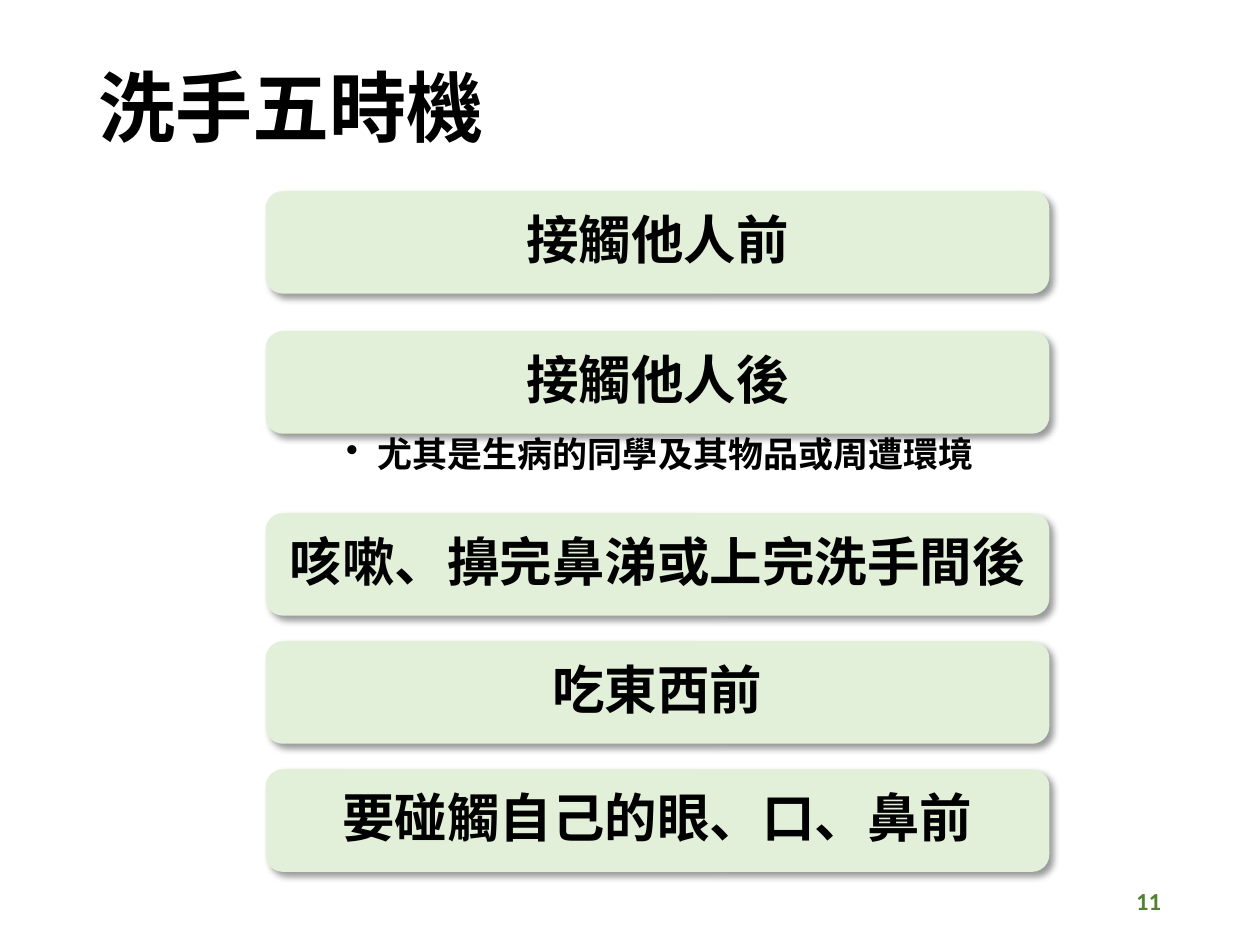
import pptx
import pptx.util
import pptx.dml.color
import pptx.enum.shapes
import pptx.enum.text
import pptx.oxml
import pptx.oxml.ns

Pt = pptx.util.Pt
RGBColor = pptx.dml.color.RGBColor
ALIGN = pptx.enum.text.PP_ALIGN
ANCHOR = pptx.enum.text.MSO_ANCHOR
NAMESPACE = pptx.oxml.ns.nsdecls("a")

BLACK = RGBColor(0x00, 0x00, 0x00)
CARD_GREEN = RGBColor(0xE2, 0xF0, 0xD9)
NUMBER_GREEN = RGBColor(0x54, 0x82, 0x35)
HEADING_FONT = "Noto Sans CJK SC"
NUMBER_FONT = "Calibri"

CARD_HEIGHT = 58.6
NOTE_HEIGHT = 45.4
MOMENTS = [
    ("接觸他人前", None, 21.4),
    ("接觸他人後", "尤其是生病的同學及其物品或周遭環境", 0),
    ("咳嗽、擤完鼻涕或上完洗手間後", None, 14.6),
    ("吃東西前", None, 14.6),
    ("要碰觸自己的眼、口、鼻前", None, 0),
]


def apply_format(target, values):
    """Set each named attribute of the target."""
    for name, value in values.items():
        setattr(target, name, value)


def write_text(shape, text, size, alignment, anchor=ANCHOR.MIDDLE,
               margins=(7.2, 3.6, 7.2, 3.6), color=BLACK, font=HEADING_FONT,
               line_spacing=0.9, bullet_indent=None):
    """Write one bold paragraph into the shape."""
    left, top, right, bottom = margins
    frame = shape.text_frame
    apply_format(frame, {
        "word_wrap": True, "vertical_anchor": anchor,
        "margin_left": Pt(left), "margin_top": Pt(top),
        "margin_right": Pt(right), "margin_bottom": Pt(bottom),
    })
    paragraph = frame.paragraphs[0]
    apply_format(paragraph, {"alignment": alignment, "line_spacing": line_spacing})
    if bullet_indent:
        properties = paragraph._p.get_or_add_pPr()
        properties.set("marL", str(Pt(bullet_indent)))
        properties.set("indent", str(-Pt(bullet_indent)))
        properties.append(pptx.oxml.parse_xml(f'<a:buChar {NAMESPACE} char="•"/>'))
    run = paragraph.add_run()
    run.text = text
    apply_format(run.font, {"name": font, "size": Pt(size), "bold": True})
    run.font.color.rgb = color
    run.font._element.append(
        pptx.oxml.parse_xml(f'<a:ea {NAMESPACE} typeface="{font}"/>'))


def add_text(slide, box, text, size, alignment, **options):
    """Add a text box filling the given box."""
    shape = slide.shapes.add_textbox(*map(Pt, box))
    write_text(shape, text, size, alignment, **options)


def add_card(slide, box, text):
    """Add a rounded card with a soft shadow and a centred label."""
    card = slide.shapes.add_shape(
        pptx.enum.shapes.MSO_SHAPE.ROUNDED_RECTANGLE, *map(Pt, box))
    card.fill.solid()
    card.fill.fore_color.rgb = CARD_GREEN
    card.line.fill.background()
    card.shadow.inherit = False
    effects = card._element.spPr.find(pptx.oxml.ns.qn("a:effectLst"))
    effects.append(pptx.oxml.parse_xml(
        f'<a:outerShdw {NAMESPACE} blurRad="{Pt(4)}" dist="{Pt(3)}" '
        'dir="2700000" algn="tl" rotWithShape="0"><a:srgbClr val="000000">'
        '<a:alpha val="40000"/></a:srgbClr></a:outerShdw>'))
    write_text(card, text, 30, ALIGN.CENTER, margins=(8.6, 8.6, 8.6, 8.6))


def add_moments(slide, left, top, width):
    """Stack the cards and their notes from the top of the region."""
    for text, note, gap in MOMENTS:
        add_card(slide, (left, top, width, CARD_HEIGHT), text)
        top += CARD_HEIGHT + gap
        if note:
            add_text(slide, (left, top, width, NOTE_HEIGHT), note, 20, ALIGN.CENTER,
                     anchor=ANCHOR.TOP, margins=(14.2, 2, 11.4, 2), bullet_indent=18)
            top += NOTE_HEIGHT


def main():
    """Build and save the hand-washing slide."""
    presentation = pptx.Presentation()
    apply_format(presentation, {"slide_width": Pt(720), "slide_height": Pt(540)})
    slide = presentation.slides.add_slide(presentation.slide_layouts[6])
    add_text(slide, (49.5, 24, 621, 79), "洗手五時機", 44, ALIGN.LEFT)
    add_moments(slide, 151.8, 109.2, 447.8)
    add_text(slide, (508.5, 500.5, 162, 28.8), "11", 14, ALIGN.RIGHT,
             color=NUMBER_GREEN, font=NUMBER_FONT, line_spacing=1.0)
    presentation.save("out.pptx")


if __name__ == "__main__":
    main()
